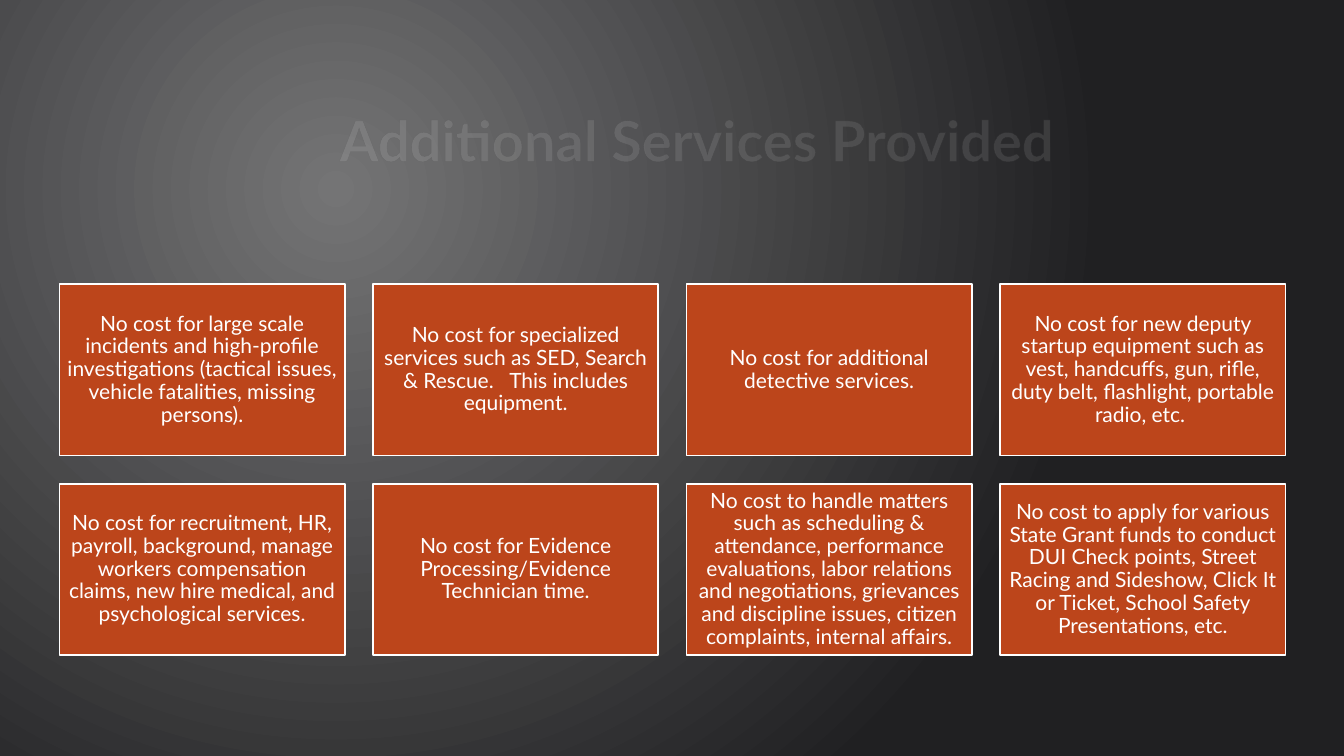
from lxml.etree import SubElement as Sub
from pptx import Presentation
from pptx.dml.color import RGBColor as RGB
from pptx.enum.shapes import MSO_SHAPE as Shape
from pptx.enum.text import MSO_ANCHOR as Anchor, PP_ALIGN as Align
from pptx.oxml.ns import qn
from pptx.util import Inches, Pt

TITLE = "Additional Services Provided"
CARDS = [
    "No cost for large scale incidents and high-profile investigations "
    "(tactical issues, vehicle fatalities, missing persons).",
    "No cost for specialized services such as SED, Search & Rescue.   "
    "This includes equipment.",
    "No cost for additional detective services.",
    "No cost for new deputy startup equipment such as vest, handcuffs, gun, "
    "rifle, duty belt, flashlight, portable radio, etc. ",
    "No cost for recruitment, HR, payroll, background, manage workers "
    "compensation claims, new hire medical, and psychological services.",
    "No cost for Evidence Processing/Evidence Technician time.",
    "No cost to handle matters such as scheduling & attendance, performance "
    "evaluations, labor relations and negotiations, grievances and discipline "
    "issues, citizen complaints, internal affairs.",
    "No cost to apply for various State Grant funds to conduct DUI Check "
    "points, Street Racing and Sideshow, Click It or Ticket, School Safety "
    "Presentations, etc.",
]

WHITE = RGB(0xFF, 0xFF, 0xFF)
RUST = RGB(0xBC, 0x45, 0x1B)
GLOW = RGB(0x74, 0x74, 0x75)
DARK = RGB(0x20, 0x20, 0x22)
EDGE = RGB(0x40, 0x40, 0x40)

WIDE, HIGH = 13.33, 7.5
COLS = 4
LEFT, TOP = 0.59, 2.82
CARD_W, CARD_H, GAP = 2.83, 1.7, 0.28

TITLE_FONT = {"name": "Lato", "size": Pt(40), "bold": True}
CARD_FONT = {"name": "Lato", "size": Pt(15)}
CARD_PARA = {"line_spacing": 0.9, "space_after": Pt(5.25)}
SIDES = ("margin_left", "margin_top", "margin_right", "margin_bottom")
CARD_FRAME = {side: Inches(0.06) for side in SIDES}


def apply(item, form):
    for key, value in form.items():
        setattr(item, key, value)


def write(shape, text, font, para={}, frame={}):
    """Put centred white text in a shape and return its run."""
    box = shape.text_frame
    apply(box, {"word_wrap": True, "vertical_anchor": Anchor.MIDDLE, **frame})
    line = box.paragraphs[0]
    apply(line, {"alignment": Align.CENTER, **para})
    run = line.add_run()
    run.text = text
    apply(run.font, font)
    run.font.color.rgb = WHITE
    return run


def paint(slide):
    """Fill the background with a round glow."""
    fill = slide.background.fill
    fill.gradient()
    for stop, color, place in zip(fill.gradient_stops, (GLOW, DARK), (0, 1)):
        stop.color.rgb = color
        stop.position = place
    grad = slide.background._cSld.find(".//" + qn("a:gradFill"))
    grad.remove(grad.find(qn("a:lin")))
    ring = Sub(grad, qn("a:path"), path="circle")
    Sub(ring, qn("a:fillToRect"), l="50000", t="50000", r="100000", b="100000")


def outline(run):
    """Give the letters a thin, mostly clear edge."""
    props = run._r.get_or_add_rPr()
    line = Sub(props, qn("a:ln"), w=str(Pt(0.75)))
    props.insert(0, line)
    color = Sub(Sub(line, qn("a:solidFill")), qn("a:srgbClr"), val=str(EDGE))
    Sub(color, qn("a:alpha"), val="10000")


def add_card(slide, index, text):
    row, col = divmod(index, COLS)
    x = LEFT + col * (CARD_W + GAP)
    y = TOP + row * (CARD_H + GAP)
    card = slide.shapes.add_shape(
        Shape.RECTANGLE, *map(Inches, (x, y, CARD_W, CARD_H)))
    card.shadow.inherit = False
    card.fill.solid()
    card.fill.fore_color.rgb = RUST
    card.line.color.rgb = WHITE
    card.line.width = Pt(1.25)
    write(card, text, CARD_FONT, CARD_PARA, CARD_FRAME)


def main():
    deck = Presentation()
    deck.slide_width, deck.slide_height = Inches(WIDE), Inches(HIGH)
    slide = deck.slides.add_slide(deck.slide_layouts[6])
    paint(slide)
    title = slide.shapes.add_textbox(*map(Inches, (1.78, 0.68, 10.26, 1.4)))
    outline(write(title, TITLE, TITLE_FONT))
    for index, text in enumerate(CARDS):
        add_card(slide, index, text)
    deck.save("out.pptx")


if __name__ == "__main__":
    main()
